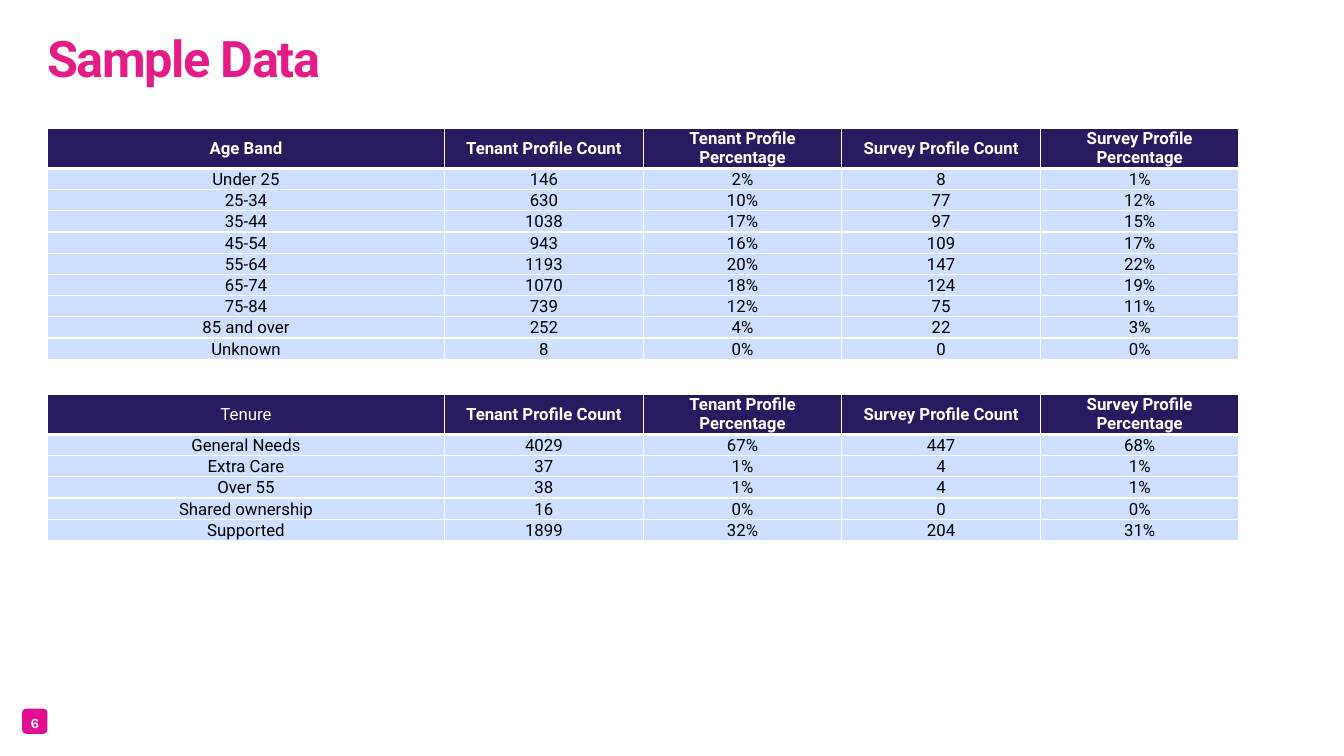
from dataclasses import dataclass

from lxml import etree
from pptx import Presentation
from pptx.dml.color import RGBColor
from pptx.enum.shapes import MSO_SHAPE
from pptx.enum.text import MSO_ANCHOR as Anchor, MSO_AUTO_SIZE as AutoSize, PP_ALIGN as Align
from pptx.oxml.ns import qn
from pptx.util import Inches, Pt


@dataclass(frozen=True)
class Theme:
    title_color: str = "E41C86"
    badge_color: str = "E30D8F"
    header_fill: str = "291A5F"
    body_fill: str = "CDE0FF"
    white: str = "FFFFFF"
    black: str = "000000"
    font: str = "Roboto"
    badge_font: str = "Karla"
    title_size: int = 36
    table_size: int = 12
    badge_size: int = 10
    grid_line: int = 1
    header_line: int = 3


THEME = Theme()

COLUMN_WIDTHS = (3.94, 1.97, 1.97, 1.97, 1.97)
HEADER_HEIGHT = 0.4
ROW_HEIGHT = 0.21
MEASURES = ("Tenant Profile Count", "Tenant Profile Percentage",
            "Survey Profile Count", "Survey Profile Percentage")

AGE_BANDS = [
    ("Under 25", "146", "2%", "8", "1%"),
    ("25-34", "630", "10%", "77", "12%"),
    ("35-44", "1038", "17%", "97", "15%"),
    ("45-54", "943", "16%", "109", "17%"),
    ("55-64", "1193", "20%", "147", "22%"),
    ("65-74", "1070", "18%", "124", "19%"),
    ("75-84", "739", "12%", "75", "11%"),
    ("85 and over", "252", "4%", "22", "3%"),
    ("Unknown", "8", "0%", "0", "0%"),
]
TENURES = [
    ("General Needs", "4029", "67%", "447", "68%"),
    ("Extra Care", "37", "1%", "4", "1%"),
    ("Over 55", "38", "1%", "4", "1%"),
    ("Shared ownership", "16", "0%", "0", "0%"),
    ("Supported", "1899", "32%", "204", "31%"),
]


def style_font(font, name, size, color, bold):
    font.name = name
    font.size = Pt(size)
    font.bold = bold
    font.color.rgb = RGBColor.from_string(color)


def add_text(shapes, box, text, line_spacing):
    """Add a one-paragraph box without insets and return its paragraph."""
    textbox = shapes.add_textbox(*map(Inches, box))
    frame = textbox.text_frame
    frame.word_wrap = True
    frame.auto_size = AutoSize.SHAPE_TO_FIT_TEXT
    frame.margin_left = frame.margin_top = frame.margin_right = frame.margin_bottom = 0
    paragraph = frame.paragraphs[0]
    paragraph.text = text
    paragraph.line_spacing = Pt(line_spacing)
    return frame, paragraph


def add_title(slide, box, text):
    frame, paragraph = add_text(slide.shapes, box, text, 60)
    frame.vertical_anchor = Anchor.BOTTOM
    style_font(paragraph.font, THEME.font, THEME.title_size, THEME.title_color, True)
    # Tighten the letter spacing by one point
    paragraph.runs[0].font._element.set("spc", "-100")


def add_page_badge(slide, box, number):
    left, top, width, height = box
    group = slide.shapes.add_group_shape()
    badge = group.shapes.add_shape(MSO_SHAPE.ROUNDED_RECTANGLE, *map(Inches, box))
    badge.shadow.inherit = False
    badge.fill.solid()
    badge.fill.fore_color.rgb = RGBColor.from_string(THEME.badge_color)
    badge.line.fill.background()
    label_box = (left, top + 0.06, width, height - 0.12)
    _, paragraph = add_text(group.shapes, label_box, number, 12)
    paragraph.alignment = Align.CENTER
    style_font(paragraph.font, THEME.badge_font, THEME.badge_size, THEME.white, True)


def set_borders(cell, top, bottom):
    properties = cell._tc.get_or_add_tcPr()
    widths = {"lnL": THEME.grid_line, "lnR": THEME.grid_line, "lnT": top, "lnB": bottom}
    for side, width in widths.items():
        line = etree.SubElement(properties, qn(f"a:{side}"), w=str(Pt(width)))
        fill = etree.SubElement(line, qn("a:solidFill"))
        etree.SubElement(fill, qn("a:srgbClr"), val=THEME.white)


def fill_cell(cell, text, row, bold):
    is_header = row == 0
    # Borders come before the fill, with a heavier rule under the header
    set_borders(cell,
                top=THEME.header_line if row == 1 else THEME.grid_line,
                bottom=THEME.header_line if is_header else THEME.grid_line)
    cell.fill.solid()
    cell.fill.fore_color.rgb = RGBColor.from_string(
        THEME.header_fill if is_header else THEME.body_fill)
    cell.vertical_anchor = Anchor.MIDDLE if is_header else Anchor.BOTTOM
    cell.margin_left = cell.margin_right = Inches(0.07 if is_header else 0.01)
    cell.margin_top = Inches(0 if is_header else 0.01)
    cell.margin_bottom = 0
    paragraph = cell.text_frame.paragraphs[0]
    paragraph.text = text
    paragraph.alignment = Align.CENTER
    style_font(paragraph.font, THEME.font, THEME.table_size,
               THEME.white if is_header else THEME.black, bold)


def add_profile_table(slide, left, top, heading, records, bold_heading=True):
    rows = [(heading, *MEASURES), *records]
    heights = [HEADER_HEIGHT] + [ROW_HEIGHT] * len(records)
    table = slide.shapes.add_table(
        len(rows), len(COLUMN_WIDTHS), Inches(left), Inches(top),
        Inches(sum(COLUMN_WIDTHS)), Inches(sum(heights))).table
    table.horz_banding = False
    for column, width in zip(table.columns, COLUMN_WIDTHS):
        column.width = Inches(width)
    for row, (texts, height) in enumerate(zip(rows, heights)):
        table.rows[row].height = Inches(height)
        for column, text in enumerate(texts):
            bold = row == 0 and (column > 0 or bold_heading)
            fill_cell(table.cell(row, column), text, row, bold)


def main():
    presentation = Presentation()
    presentation.slide_width = Inches(13.33)
    presentation.slide_height = Inches(7.5)
    slide = presentation.slides.add_slide(presentation.slide_layouts[6])

    add_title(slide, (0.47, 0.09, 7.41, 0.78), "Sample Data")
    add_page_badge(slide, (0.22, 7.03, 0.25, 0.25), "6")
    add_profile_table(slide, 0.47, 1.27, "Age Band", AGE_BANDS)
    add_profile_table(slide, 0.47, 3.91, "Tenure", TENURES, bold_heading=False)

    presentation.save("out.pptx")


if __name__ == "__main__":
    main()
